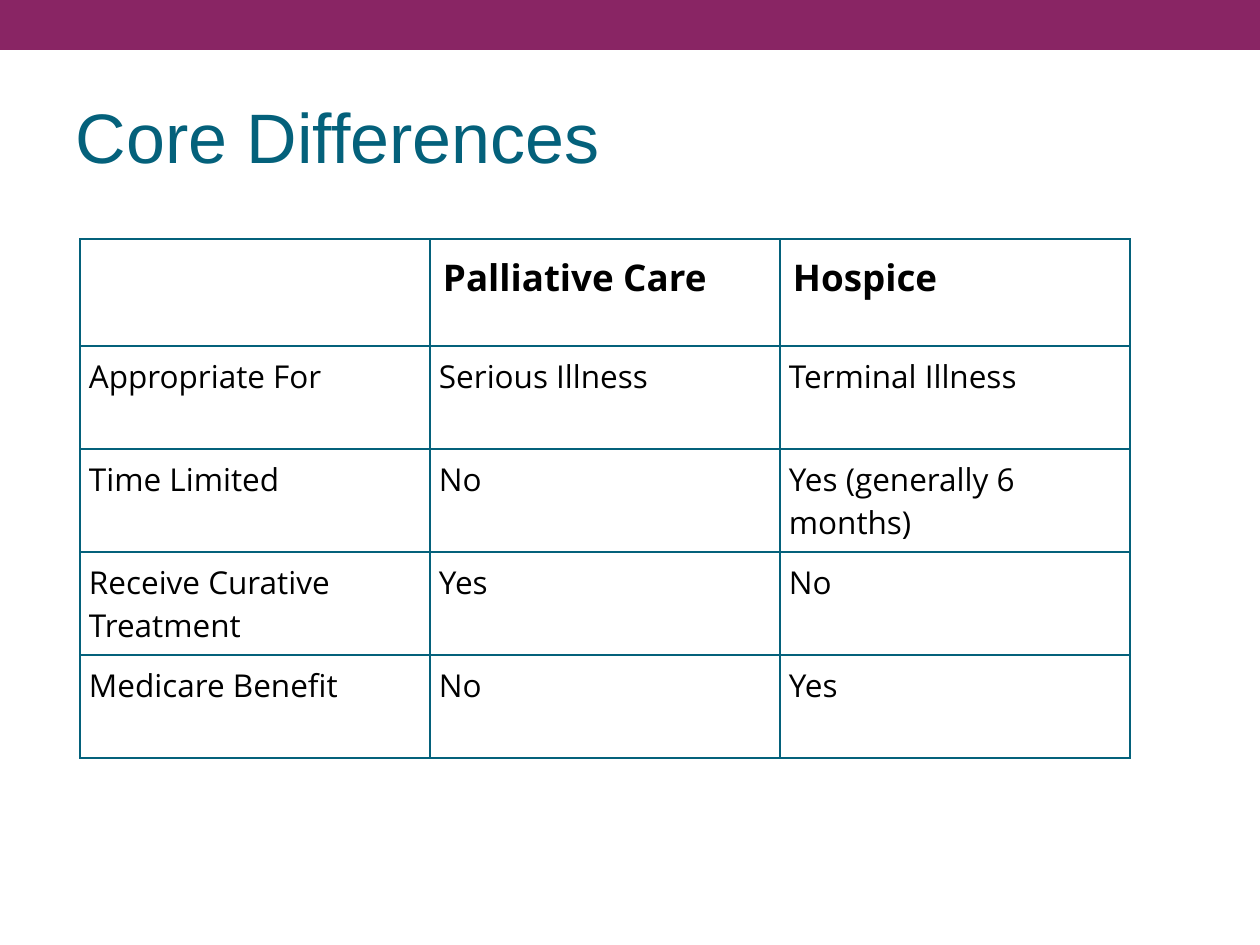
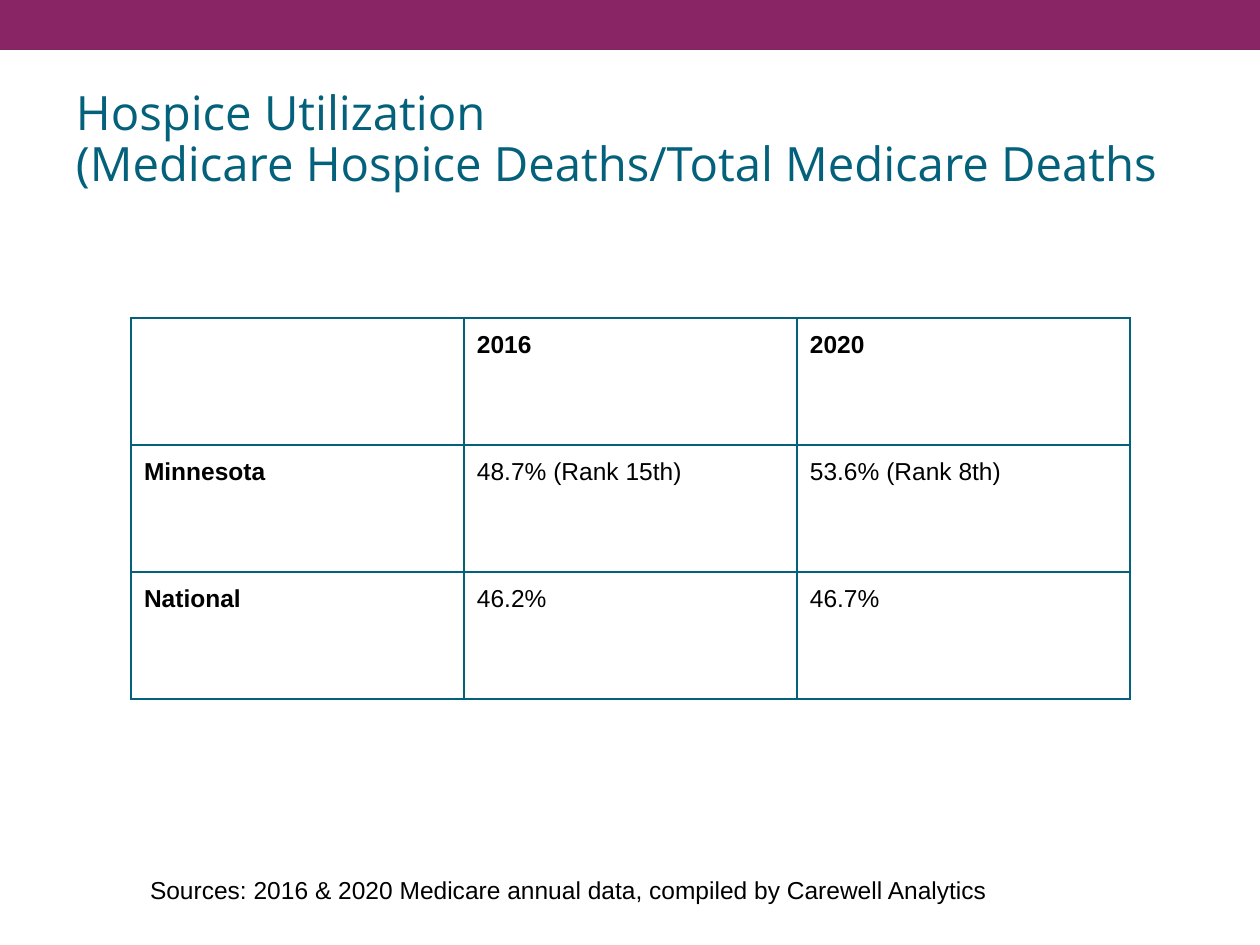
from lxml import etree
from pptx import Presentation
from pptx import util as u
from pptx.dml.color import RGBColor
from pptx.enum import shapes, text
from pptx.oxml import ns

COLORS = {"band": "892564", "teal": "04617B", "text": "000000"}
EMU_PER_PX = 914400 / 126
INSET = 13
WIDTH, HEIGHT = 1260, 945

SLIDES = [
    {
        "title": ["Core Differences"],
        "title_font": ("Arial", 40),
        "table": [
            ["", "Palliative Care", "Hospice"],
            ["Appropriate For", "Serious Illness", "Terminal Illness"],
            ["Time Limited", "No", "Yes (generally 6 months)"],
            ["Receive Curative Treatment", "Yes", "No"],
            ["Medicare Benefit", "No", "Yes"],
        ],
        "origin": (80, 239),
        "column_width": 350,
        "row_heights": (107, 103),
        "font": "Open Sans",
        "sizes": (21, 18),
        "insets": (INSET, 9),
        "lines": (0.75, 1),
        "bold_labels": False,
        "source": None,
    },
    {
        "title": ["Hospice Utilization", "(Medicare Hospice Deaths/Total Medicare Deaths"],
        "title_font": ("Open Sans", 27),
        "table": [
            ["", "2016", "2020"],
            ["Minnesota", "48.7% (Rank 15th)", "53.6% (Rank 8th)"],
            ["National", "46.2%", "46.7%"],
        ],
        "origin": (131, 318),
        "column_width": 333,
        "row_heights": (127, 127),
        "font": "Arial",
        "sizes": (14, 14),
        "insets": (INSET, INSET),
        "lines": (1.5, 1.5),
        "bold_labels": True,
        "source": "Sources: 2016 & 2020 Medicare annual data, compiled by Carewell Analytics",
    },
]


def px(length):
    return u.Emu(round(length * EMU_PER_PX))


def add_text(slide, box, lines, font, color, anchor, inset_y, spacing):
    frame = slide.shapes.add_textbox(*map(px, box)).text_frame
    frame.word_wrap = True
    frame.vertical_anchor = anchor
    frame.margin_left = frame.margin_right = px(INSET)
    frame.margin_top = frame.margin_bottom = px(inset_y)
    frame.text = "\n".join(lines)
    for paragraph in frame.paragraphs:
        paragraph.line_spacing = spacing
        paragraph.font.name = font[0]
        paragraph.font.size = u.Pt(font[1])
        paragraph.font.color.rgb = RGBColor.from_string(COLORS[color])


presentation = Presentation()
presentation.slide_width, presentation.slide_height = px(WIDTH), px(HEIGHT)

for content in SLIDES:
    slide = presentation.slides.add_slide(presentation.slide_layouts[6])

    band = slide.shapes.add_shape(shapes.MSO_SHAPE.RECTANGLE, 0, 0, px(WIDTH), px(50))
    band.shadow.inherit = False
    band.fill.solid()
    band.fill.fore_color.rgb = RGBColor.from_string(COLORS["band"])
    band.line.fill.background()

    add_text(slide, (63, 73, 1134, 136), content["title"], content["title_font"],
             "teal", text.MSO_ANCHOR.MIDDLE, 6, 0.9)

    rows = content["table"]
    header_height, body_height = content["row_heights"]
    table_width = content["column_width"] * len(rows[0])
    table_height = header_height + body_height * (len(rows) - 1)
    table = slide.shapes.add_table(len(rows), len(rows[0]), *map(px, content["origin"]),
                                   px(table_width), px(table_height)).table
    table.first_row = table.horz_banding = False
    for column in table.columns:
        column.width = px(content["column_width"])

    for row_index, row in enumerate(rows):
        kind = min(row_index, 1)
        table.rows[row_index].height = px(content["row_heights"][kind])
        for column_index, label in enumerate(row):
            cell = table.cell(row_index, column_index)
            inset = px(content["insets"][kind])
            cell.margin_left = cell.margin_right = inset
            cell.margin_top = cell.margin_bottom = inset
            cell.text = label
            font = cell.text_frame.paragraphs[0].font
            font.name = content["font"]
            font.size = u.Pt(content["sizes"][kind])
            font.bold = row_index == 0 or (content["bold_labels"] and column_index == 0)
            font.color.rgb = RGBColor.from_string(COLORS["text"])

            properties = cell._tc.get_or_add_tcPr()
            for side in ("L", "R", "T", "B"):
                weight = content["lines"][1 if side == "B" else kind]
                line = etree.SubElement(properties, ns.qn(f"a:ln{side}"), w=str(u.Pt(weight)))
                fill = etree.SubElement(line, ns.qn("a:solidFill"))
                etree.SubElement(fill, ns.qn("a:srgbClr"), val=COLORS["teal"])
            cell.fill.background()

    if content["source"]:
        add_text(slide, (137, 862, 992, 55), [content["source"]], ("Arial", 14),
                 "text", text.MSO_ANCHOR.TOP, INSET, 1.0)

presentation.save("out.pptx")
